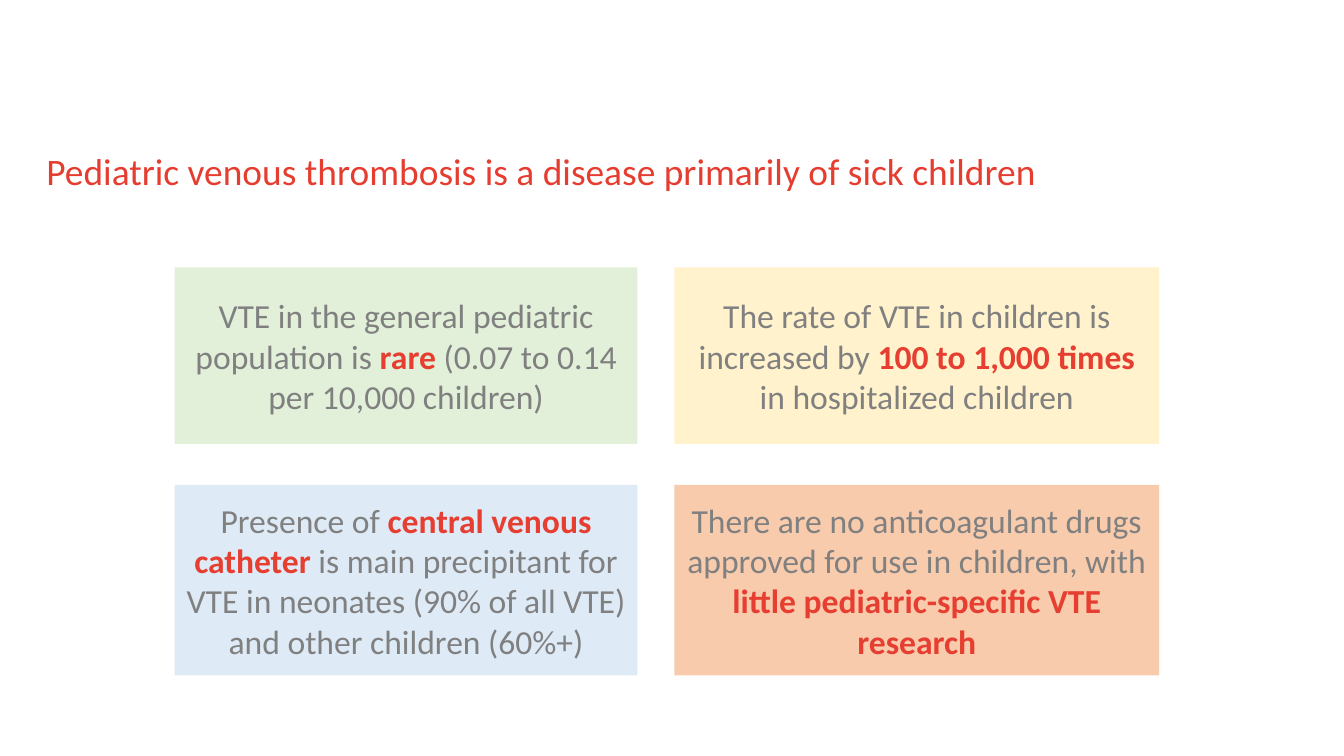
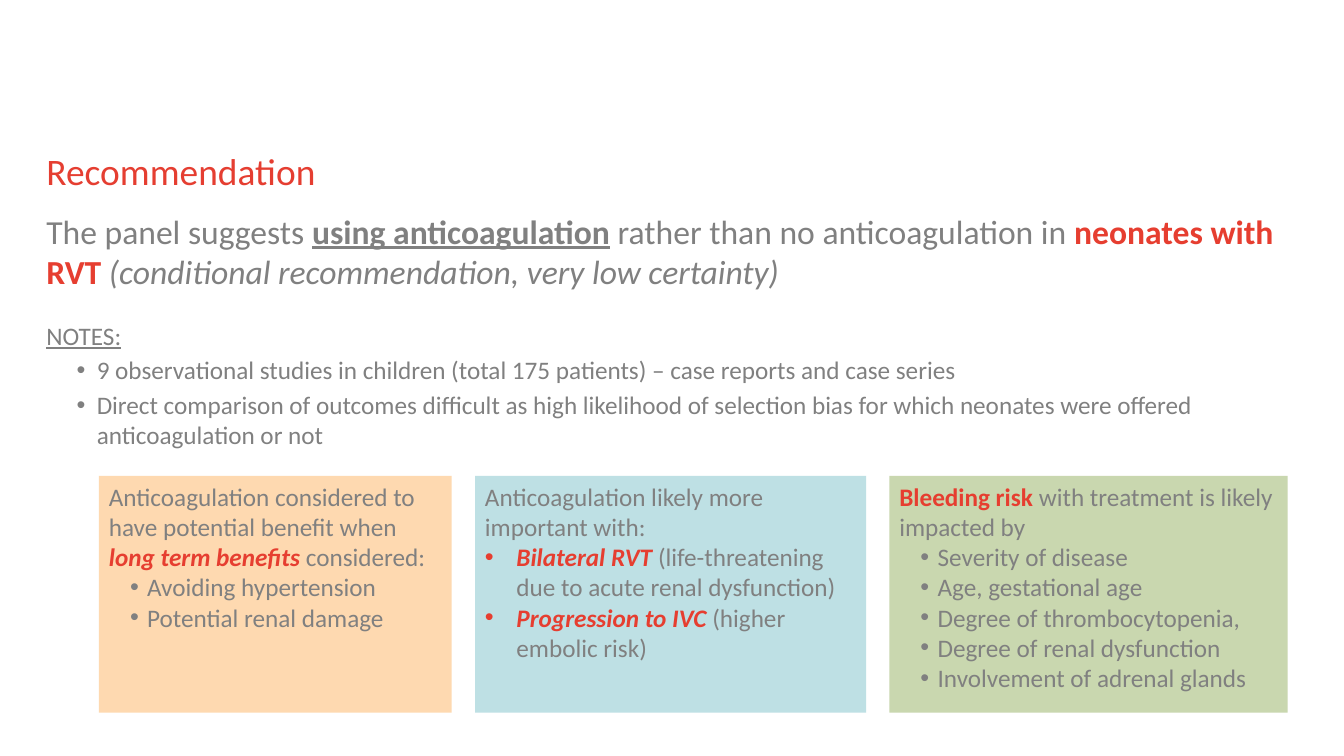
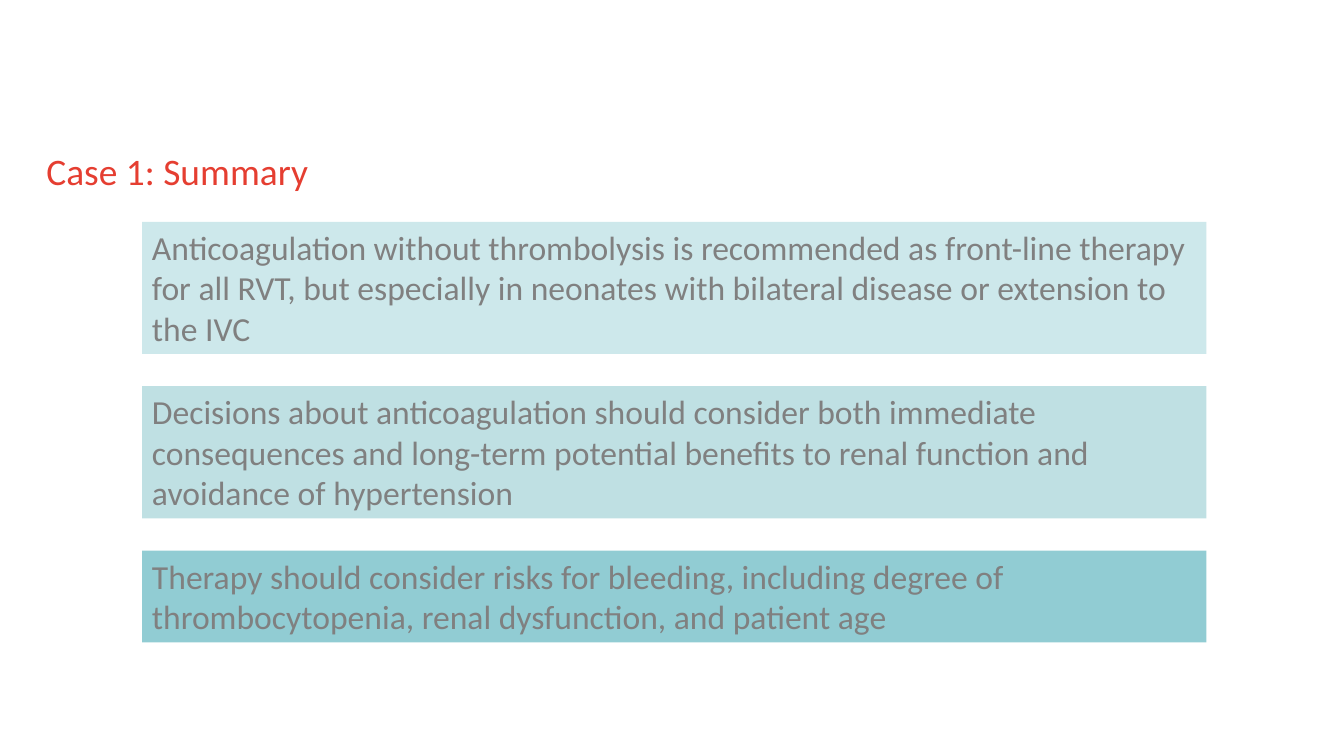
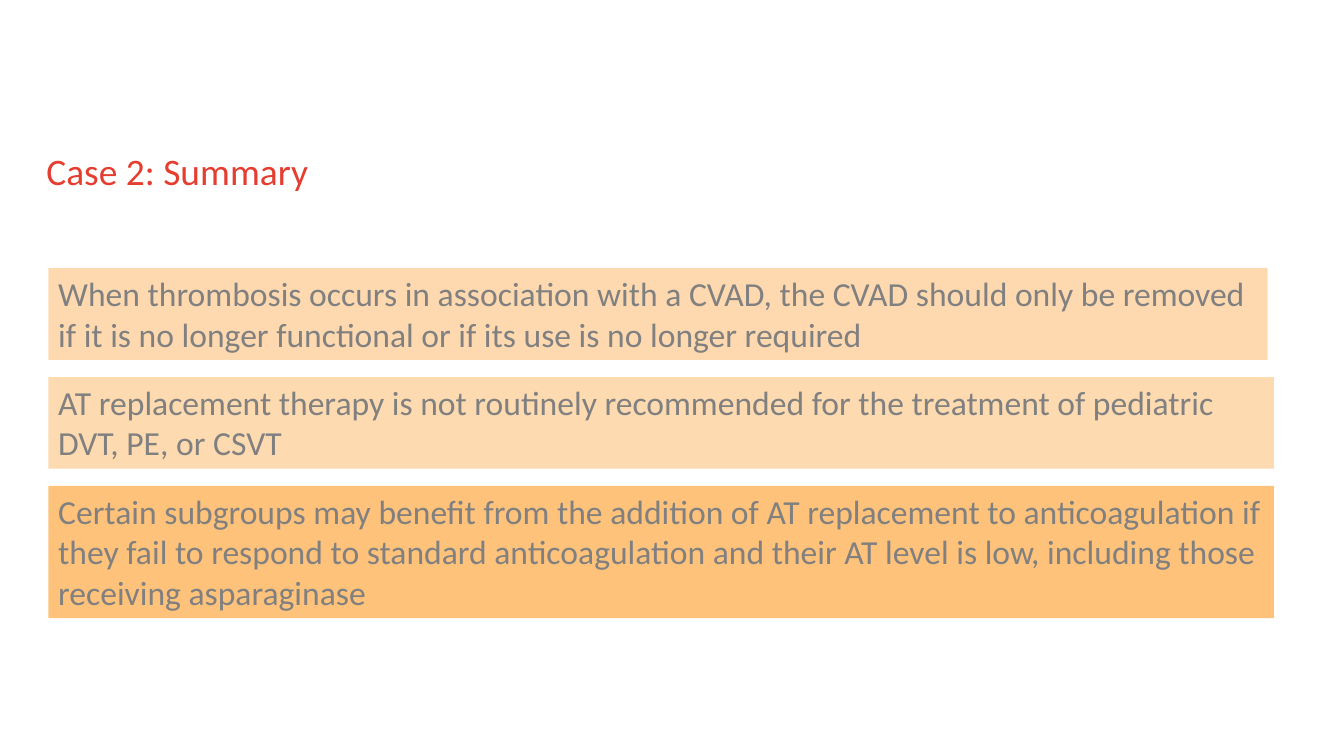
"""Build four slides on the treatment of pediatric venous thrombosis."""
from lxml import etree
from pptx import Presentation
from pptx.dml.color import RGBColor
from pptx.enum.shapes import MSO_SHAPE
from pptx.enum.text import MSO_ANCHOR, MSO_AUTO_SIZE, PP_ALIGN
from pptx.oxml.ns import qn
from pptx.util import Pt

RECTANGLE = MSO_SHAPE.RECTANGLE
TOP, MIDDLE = MSO_ANCHOR.TOP, MSO_ANCHOR.MIDDLE
LEFT, CENTER = PP_ALIGN.LEFT, PP_ALIGN.CENTER
NO_AUTOFIT = MSO_AUTO_SIZE.NONE

FONT = "Calibri"
GRAY, RED, TITLE_RED = "808080", "E63E30", "E53E31"
TITLE_BOX = (33.12, 105.84, 864, 56)
TITLE_ONLY = 5
INDENTED = (27.36, -12.24)
HANGING = (22.5, -22.5)
NOTE_INDENT = (36, -14.4)


def color(hex_string):
    """Turn a hex string into a colour."""
    return RGBColor.from_string(hex_string)


def place(shape, box):
    """Move a shape to a box of left, top, width and height."""
    shape.left, shape.top, shape.width, shape.height = map(Pt, box)


def set_font(font, size, hex_string):
    """Apply the shared typeface with a size and colour."""
    font.name, font.size = FONT, Pt(size)
    font.color.rgb = color(hex_string)


def set_frame(frame, anchor, inset=None):
    """Set wrapping, anchor and an optional equal inset."""
    frame.word_wrap = True
    frame.auto_size = NO_AUTOFIT
    frame.vertical_anchor = anchor
    if inset is not None:
        frame.margin_left = frame.margin_right = Pt(inset)
        frame.margin_top = frame.margin_bottom = Pt(inset)


def write(paragraph, runs, size, align=LEFT, bullet=None, before=0):
    """Fill a paragraph with runs, styled by the letters r, b, i and u."""
    if bullet:
        properties = paragraph._p.get_or_add_pPr()
        margin, indent = bullet
        properties.set("marL", str(Pt(margin)))
        properties.set("indent", str(Pt(indent)))
        etree.SubElement(properties, qn("a:buFont"), typeface="Arial")
        etree.SubElement(properties, qn("a:buChar"), char="•")
    paragraph.alignment = align
    if before:
        paragraph.space_before = Pt(before)
    set_font(paragraph.font, size, GRAY)
    for text, style in [(runs, "")] if isinstance(runs, str) else runs:
        run = paragraph.add_run()
        run.text = text
        if "r" in style:
            run.font.color.rgb = color(RED)
        if "b" in style:
            run.font.bold = True
        if "i" in style:
            run.font.italic = True
        if "u" in style:
            run.font.underline = True


def add_titled_slide(deck, heading):
    """Add a slide with the shared title style."""
    slide = deck.slides.add_slide(deck.slide_layouts[TITLE_ONLY])
    title = slide.shapes.title
    place(title, TITLE_BOX)
    set_frame(title.text_frame, TOP, 0)
    title.text_frame.text = heading
    paragraph = title.text_frame.paragraphs[0]
    paragraph.alignment = LEFT
    set_font(paragraph.font, 26.7, TITLE_RED)
    return slide


def add_panel(slide, box, fill, lead, size=24, anchor=TOP, align=LEFT,
              items=(), bullet=None):
    """Add a filled panel with a lead paragraph and bulleted items."""
    panel = slide.shapes.add_shape(RECTANGLE, *map(Pt, box))
    panel.shadow.inherit = False
    panel.fill.solid()
    panel.fill.fore_color.rgb = color(fill)
    panel.line.fill.background()
    frame = panel.text_frame
    set_frame(frame, anchor)
    write(frame.paragraphs[0], lead, size, align)
    for item in items:
        write(frame.add_paragraph(), item, size, align, bullet)


def add_fact_grid(slide, box, widths, heights, facts):
    """Place facts row by row, sharing the room left over as gaps."""
    left, top, width, height = box
    lefts = (left, left + width - widths[1])
    tops = (top, top + height - heights[1])
    for index, (fill, runs) in enumerate(facts):
        row, column = divmod(index, 2)
        cell = (lefts[column], tops[row], widths[column], heights[row])
        add_panel(slide, cell, fill, runs, anchor=MIDDLE, align=CENTER)


def add_recommendation(slide, box, advice, notes):
    """Add the advice followed by its bulleted notes."""
    frame = slide.shapes.add_textbox(*map(Pt, box)).text_frame
    set_frame(frame, TOP, 0)
    write(frame.paragraphs[0], advice, 24)
    write(frame.add_paragraph(), [("NOTES:", "u")], 18, before=20.5)
    for note in notes:
        write(frame.add_paragraph(), note, 18, bullet=NOTE_INDENT, before=3.2)


def add_factor_row(slide, box, gap, factors):
    """Place panels of factors side by side from the left of the box."""
    left, top, height = box
    for width, fill, lead, bullet, items in factors:
        add_panel(slide, (left, top, width, height), fill, lead, 18,
                  items=items, bullet=bullet)
        left += width + gap


def add_summary(slide, origin, gap, points):
    """Stack summary points downwards from the origin."""
    left, top = origin
    for width, height, fill, text in points:
        add_panel(slide, (left, top, width, height), fill, text)
        top += height + gap


def main():
    """Build and save the presentation."""
    deck = Presentation()
    deck.slide_width, deck.slide_height = Pt(960), Pt(540)

    slide = add_titled_slide(
        deck,
        "Pediatric venous thrombosis is a disease primarily of sick children")
    add_fact_grid(slide, (124.8, 191, 703.2, 291.4), (330.5, 346.3), (126, 136), [
        ("E2F0D9", [("VTE in the general pediatric population is ", ""),
                    ("rare", "rb"), (" (0.07 to 0.14 per 10,000 children)", "")]),
        ("FFF2CC", [("The rate of VTE in children is increased by ", ""),
                    ("100 to 1,000 times ", "rb"),
                    ("in hospitalized children", "")]),
        ("DEEBF7", [("Presence of ", ""), ("central venous catheter", "rb"),
                    (" is main precipitant for VTE in neonates "
                     "(90% of all VTE) and other children (60%+)", "")]),
        ("F8CBAD", [("There are no anticoagulant drugs approved for use "
                     "in children, with ", ""),
                    ("little pediatric-specific VTE research", "rb")]),
    ])

    slide = add_titled_slide(deck, "Recommendation")
    add_recommendation(
        slide, (33.12, 150.5, 898.6, 169),
        [("The panel suggests ", ""), ("using anticoagulation", "bu"),
         (" rather than no anticoagulation in ", ""),
         ("neonates with RVT ", "rb"),
         ("(conditional recommendation, very low certainty)", "i")],
        ["9 observational studies in children (total 175 patients) – "
         "case reports and case series",
         "Direct comparison of outcomes difficult as high likelihood of "
         "selection bias for which neonates were offered anticoagulation or not"])
    add_factor_row(slide, (70.7, 340, 169), 16.6, [
        (252, "FED9B0",
         [("Anticoagulation considered to have potential benefit when ", ""),
          ("long term benefits ", "rbi"), ("considered:", "")],
         INDENTED, ["Avoiding hypertension", "Potential renal damage"]),
        (279.4, "BEE0E4", "Anticoagulation likely more important with:", HANGING,
         [[("Bilateral RVT ", "rbi"),
           ("(life-threatening due to acute renal dysfunction)", "")],
          [("Progression to IVC ", "rbi"), ("(higher embolic risk)", "")]]),
        (284.4, "C9D7AF",
         [("Bleeding risk ", "rb"),
          ("with treatment is likely impacted by", "")],
         INDENTED,
         ["Severity of disease", "Age, gestational age",
          "Degree of thrombocytopenia,", "Degree of renal dysfunction",
          "Involvement of adrenal glands"]),
    ])

    two_lines, three_lines = 65.5, 94.4
    slide = add_titled_slide(deck, "Case 1: Summary")
    add_summary(slide, (101.5, 158.5), 23, [
        (760.3, three_lines, "CDE8EB",
         "Anticoagulation without thrombolysis is recommended as front-line "
         "therapy for all RVT, but especially in neonates with bilateral "
         "disease or extension to the IVC"),
        (760.3, three_lines, "BFE0E3",
         "Decisions about anticoagulation should consider both immediate "
         "consequences and long-term potential benefits to renal function "
         "and avoidance of hypertension"),
        (760.3, two_lines, "91CCD3",
         "Therapy should consider risks for bleeding, including degree of "
         "thrombocytopenia, renal dysfunction, and patient age"),
    ])

    slide = add_titled_slide(deck, "Case 2: Summary")
    add_summary(slide, (34.5, 191.5), 12.3, [
        (871, two_lines, "FED9B0",
         "When thrombosis occurs in association with a CVAD, the CVAD should "
         "only be removed if it is no longer functional or if its use is no "
         "longer required"),
        (875.5, two_lines, "FDDAB0",
         "AT replacement therapy is not routinely recommended for the "
         "treatment of pediatric DVT, PE, or CSVT"),
        (875.5, three_lines, "FEC27B",
         "Certain subgroups may benefit from the addition of AT replacement "
         "to anticoagulation if they fail to respond to standard "
         "anticoagulation and their AT level is low, including those "
         "receiving asparaginase"),
    ])

    deck.save("out.pptx")


if __name__ == "__main__":
    main()
